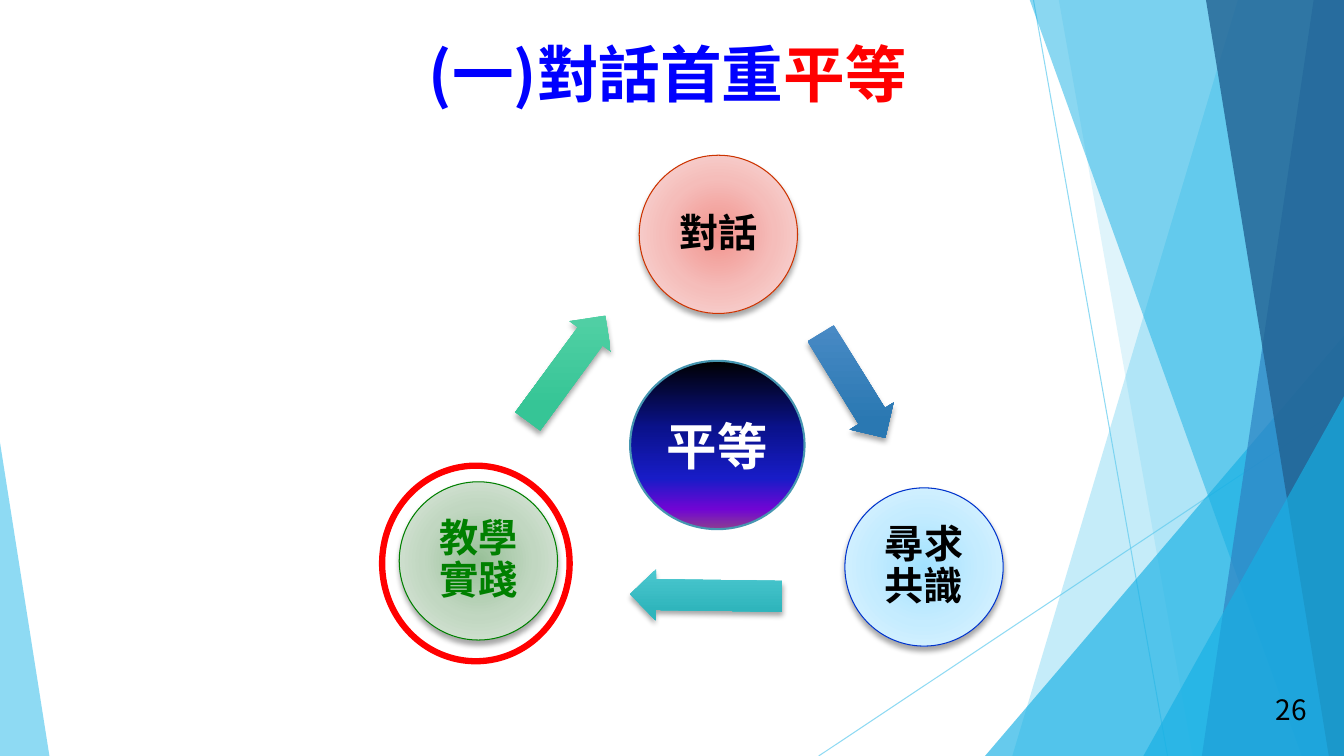
from lxml import etree
from pptx import Presentation
from pptx.dml.color import RGBColor
from pptx.enum.shapes import MSO_CONNECTOR, MSO_SHAPE
from pptx.enum.text import MSO_ANCHOR, MSO_AUTO_SIZE, PP_ALIGN
from pptx.oxml.ns import qn
from pptx.util import Inches, Pt

OVAL = MSO_SHAPE.OVAL
ARROW = MSO_SHAPE.RIGHT_ARROW
TRIANGLE = MSO_SHAPE.ISOSCELES_TRIANGLE
STRAIGHT = MSO_CONNECTOR.STRAIGHT
CENTER = PP_ALIGN.CENTER
TOP, MIDDLE = MSO_ANCHOR.TOP, MSO_ANCHOR.MIDDLE
GROW = MSO_AUTO_SIZE.SHAPE_TO_FIT_TEXT

CJK_FONT = "Noto Sans CJK SC"
WIDTH, HEIGHT, BLEED = 13.33, 7.5, -0.01
COLORS = {
    "sky": "5FCBEF", "azure": "17B0E4", "blue": "2E83C3", "navy": "226292",
    "title": "0000FF", "red": "FF0000", "green": "008000", "black": "000000",
    "white": "FFFFFF", "rust": "CC3300", "royal": "0033CC", "teal": "4696B1",
}
GRADIENTS = {
    "dialogue": [(0, "F2928C"), (50, "F5BDBA"), (100, "F9DFDE")],
    "consensus": [(0, "A2E2FF"), (50, "C5ECFF"), (100, "E2F5FF")],
    "practice": [(0, "98C098"), (50, "C1D7C1"), (100, "E1EBE1")],
    "to_consensus": [(0, "4A8BC6"), (78, "2A78B2")],
    "to_practice": [(0, "4DC8D0"), (78, "2FB5BC")],
    "to_dialogue": [(0, "56D2A7"), (78, "36C596")],
    "equality": [(0, "000000"), (40, "0A128C"), (70, "181CC7"),
                 (88, "7005D4"), (100, "8C3D91")],
}
STAGES = [
    ("對話", 6.34, 1.54, "dialogue", "rust", "black"),
    ("尋求共識", 8.38, 4.84, "consensus", "royal", "black"),
    ("教學實踐", 3.96, 4.78, "practice", "green", "green"),
]
ARROWS = [
    (7.85, 3.57, 1.22, 58.3, "to_consensus"),
    (6.25, 5.65, 1.51, 180.8, "to_practice"),
    (4.97, 3.4, 1.3, 306.3, "to_dialogue"),
]
RIGHT_BANDS = [
    (12.28, 10.04, "sky", 36),
    (10.5, 11.83, "sky", 20),
    (10.21, 12.91, "azure", 50),
    (13.03, 11.92, "blue", 70),
    (11.96, 13.18, "navy", 80),
]


def rgb(name):
    """Return the palette colour of that name."""
    return RGBColor.from_string(COLORS[name])


def xml_child(parent, tag, **attributes):
    """Append a drawing element with the given attributes."""
    values = {key: str(value) for key, value in attributes.items()}
    return etree.SubElement(parent, qn(tag), values)


def set_opacity(element, percent):
    """Make the first solid colour inside the element translucent."""
    color = next(element.iter(qn("a:srgbClr")))
    xml_child(color, "a:alpha", val=percent * 1000)


def set_gradient(shape, stops, radial=False):
    """Fill a shape with a radial or top-down gradient."""
    shape.fill.gradient()
    gradient = shape.element.spPr.find(qn("a:gradFill"))
    for child in list(gradient):
        gradient.remove(child)
    gradient.set("rotWithShape", "0")
    stop_list = xml_child(gradient, "a:gsLst")
    for position, color in stops:
        stop = xml_child(stop_list, "a:gs", pos=position * 1000)
        xml_child(stop, "a:srgbClr", val=color)
    if radial:
        focus = xml_child(gradient, "a:path", path="circle")
        xml_child(focus, "a:fillToRect", l=50000, t=50000, r=50000, b=50000)
    else:
        xml_child(gradient, "a:lin", ang=5400000, scaled=0)


def set_shadow(shape):
    """Give a shape a soft shadow straight below it."""
    effects = shape.element.spPr.find(qn("a:effectLst"))
    shadow = xml_child(effects, "a:outerShdw", blurRad=Pt(4), dist=Pt(3),
                       dir=5400000, rotWithShape=0)
    color = xml_child(shadow, "a:srgbClr", val=COLORS["black"])
    xml_child(color, "a:alpha", val=35000)


def add_figure(slide, kind, left, top, width, height, line=None, weight=0.75):
    """Add an unfilled preset shape with an optional outline."""
    figure = slide.shapes.add_shape(
        kind, Inches(left), Inches(top), Inches(width), Inches(height))
    figure.shadow.inherit = False
    figure.fill.background()
    if line:
        figure.line.color.rgb = rgb(line)
        figure.line.width = Pt(weight)
    else:
        figure.line.fill.background()
    return figure


def write_text(shape, runs, size, font=CJK_FONT, bold=True, anchor=MIDDLE,
               inset=None, line_spacing=None, space_after=None):
    """Write one centred paragraph of (text, colour) runs into a shape."""
    frame = shape.text_frame
    frame.word_wrap = True
    frame.vertical_anchor = anchor
    if inset is not None:
        frame.margin_left = frame.margin_right = Inches(inset)
        frame.margin_top = frame.margin_bottom = Inches(inset)
    paragraph = frame.paragraphs[0]
    paragraph.alignment = CENTER
    if line_spacing:
        paragraph.line_spacing = line_spacing
    if space_after:
        paragraph.space_after = Pt(space_after)
    for text, color in runs:
        run = paragraph.add_run()
        run.text = text
        run.font.size = Pt(size)
        run.font.bold = bold
        run.font.color.rgb = rgb(color)
        run.font.name = font
        xml_child(run.font._element, "a:ea", typeface=CJK_FONT)


def add_ray(slide, x1, y1, x2, y2):
    """Add a thin translucent background line."""
    ray = slide.shapes.add_connector(
        STRAIGHT, Inches(x1), Inches(y1), Inches(x2), Inches(y2))
    ray.line.color.rgb = rgb("sky")
    ray.line.width = Pt(0.75)
    set_opacity(ray.element.spPr, 70)
    xml_child(ray.element.spPr, "a:effectLst")


def add_band(slide, top_x, bottom_x, color, opacity):
    """Add a slanted band that reaches the right edge of the slide."""
    builder = slide.shapes.build_freeform(Inches(top_x), Inches(BLEED))
    corners = [(WIDTH, BLEED), (WIDTH, HEIGHT), (bottom_x, HEIGHT)]
    builder.add_line_segments([(Inches(x), Inches(y)) for x, y in corners])
    band = builder.convert_to_shape()
    band.shadow.inherit = False
    band.line.fill.background()
    band.fill.solid()
    band.fill.fore_color.rgb = rgb(color)
    set_opacity(band.element.spPr, opacity)


def add_corner(slide, left, top, width, apex, color, opacity):
    """Add a translucent right triangle standing on the bottom edge."""
    corner = add_figure(slide, TRIANGLE, left, top, width, HEIGHT - top)
    corner.adjustments[0] = apex
    corner.fill.solid()
    corner.fill.fore_color.rgb = rgb(color)
    set_opacity(corner.element.spPr, opacity)


def add_backdrop(slide):
    """Add the blue facets at both sides of the slide."""
    add_ray(slide, 10.25, 0, 11.58, HEIGHT)
    add_ray(slide, WIDTH, 4.03, 8.12, HEIGHT)
    for band in RIGHT_BANDS[:2]:
        add_band(slide, *band)
    add_corner(slide, 9.77, 3.33, 3.56, 1, "azure", 66)
    for band in RIGHT_BANDS[2:]:
        add_band(slide, *band)
    add_corner(slide, 11.34, 3.93, 1.99, 1, "azure", 66)
    add_corner(slide, 0, 4.39, 0.49, 0, "sky", 70)


def add_stage(slide, label, left, top, gradient, line, color):
    """Add one labelled circle of the cycle."""
    stage = add_figure(slide, OVAL, left, top, 1.57, 1.57, line)
    set_gradient(stage, GRADIENTS[gradient], radial=True)
    set_shadow(stage)
    write_text(stage, [(label, color)], 28, font="Arial", inset=0.04,
               line_spacing=0.9, space_after=9.8)


def add_cycle_arrow(slide, left, top, length, rotation, gradient):
    """Add one arrow between two stages of the cycle."""
    arrow = add_figure(slide, ARROW, left, top, length, 0.51)
    arrow.adjustments[0] = 0.6
    arrow.adjustments[1] = 0.5
    arrow.rotation = rotation
    set_gradient(arrow, GRADIENTS[gradient])
    set_shadow(arrow)


def add_title(slide):
    """Place and fill the title placeholder."""
    title = slide.shapes.title
    title.left, title.top = Inches(0), Inches(0.31)
    title.width, title.height = Inches(13.25), Inches(0.84)
    write_text(title, [("(一)對話首重", "title"), ("平等", "red")], 44, anchor=TOP)
    title.text_frame.auto_size = GROW


def main():
    """Build the slide and save it."""
    deck = Presentation()
    deck.slide_width, deck.slide_height = Inches(WIDTH), Inches(HEIGHT)
    slide = deck.slides.add_slide(deck.slide_layouts[5])
    add_backdrop(slide)
    for stage in STAGES:
        add_stage(slide, *stage)
    for arrow in ARROWS:
        add_cycle_arrow(slide, *arrow)
    add_title(slide)
    equality = add_figure(slide, OVAL, 6.25, 3.58, 1.73, 1.67, "teal", 1.5)
    set_gradient(equality, GRADIENTS["equality"])
    write_text(equality, [("平等", "white")], 36)
    page_number = slide.shapes.add_textbox(
        Inches(12.46), Inches(6.79), Inches(0.69), Inches(0.5))
    write_text(page_number, [("26", "black")], 20, bold=False)
    add_figure(slide, OVAL, 3.79, 4.62, 1.86, 1.94, "red", 4.5)
    deck.save("out.pptx")


if __name__ == "__main__":
    main()
